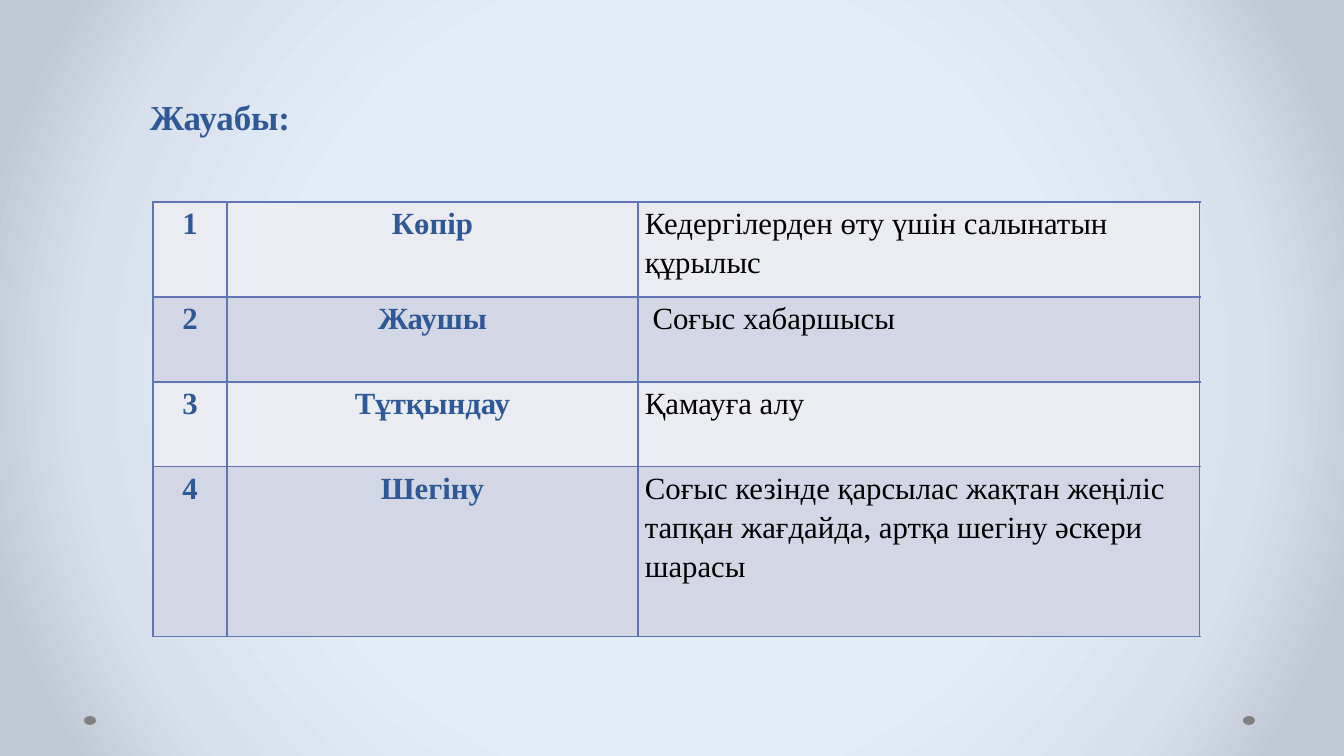
"""Build the answer slide: a heading and a table of four terms with meanings."""
from lxml.etree import SubElement
from pptx import Presentation
from pptx.dml.color import RGBColor
from pptx.enum.shapes import MSO_SHAPE
from pptx.enum.text import PP_ALIGN
from pptx.oxml.ns import qn
from pptx.util import Pt

HEADING = "Жауабы:"
ANSWERS = [
    ("1", "Көпір", "Кедергілерден өту үшін салынатын құрылыс"),
    ("2", "Жаушы", " Соғыс хабаршысы"),
    ("3", "Тұтқындау", "Қамауға алу"),
    ("4", "Шегіну", "Соғыс кезінде қарсылас жақтан жеңіліс тапқан жағдайда, "
                    "артқа шегіну әскери шарасы"),
]
COLUMN_WIDTHS = [74, 411, 562]
ROW_HEIGHTS = [95, 85, 85, 170]
TABLE_LEFT, TABLE_TOP = 153, 202
DOT_LEFTS = [84, 1243]

BLUE = RGBColor(0x2F, 0x58, 0x97)
BLACK = RGBColor(0, 0, 0)
GRAY = RGBColor(0x80, 0x80, 0x80)
BORDER = RGBColor(0x60, 0x76, 0xB4)
BANDS = [RGBColor(0xEA, 0xEC, 0xF2), RGBColor(0xD2, 0xD6, 0xE5)]
BACKGROUND = [
    (50, RGBColor(0xE3, 0xED, 0xF9)),
    (76, RGBColor(0xD8, 0xE0, 0xEB)),
    (92, RGBColor(0xBF, 0xC9, 0xD4)),
]


def px(length):
    return round(length * 914400 / 100.8)


def paint_background(page):
    page.background.fill.gradient()
    gradient = page.element.find(".//" + qn("a:gradFill"))
    for child in list(gradient):
        gradient.remove(child)
    stops = SubElement(gradient, qn("a:gsLst"))
    for percent, color in BACKGROUND:
        stop = SubElement(stops, qn("a:gs"), pos=str(percent * 1000))
        SubElement(stop, qn("a:srgbClr"), val=str(color))
    circle = SubElement(gradient, qn("a:path"), {"path": "circle"})
    SubElement(circle, qn("a:fillToRect"), {side: "50000" for side in "ltrb"})


def write(frame, text, size, color, bold, align=PP_ALIGN.LEFT):
    para = frame.paragraphs[0]
    para.alignment = align
    span = para.add_run()
    span.text = text
    span.font.color.rgb = color
    style = {"name": "Times New Roman", "size": Pt(size), "bold": bold}
    for name, value in style.items():
        setattr(span.font, name, value)
    return para


def add_borders(cell):
    properties = cell._tc.get_or_add_tcPr()
    for index, side in enumerate(("lnL", "lnR", "lnT", "lnB")):
        line = SubElement(properties, qn("a:" + side), w=str(Pt(1)))
        fill = SubElement(line, qn("a:solidFill"))
        SubElement(fill, qn("a:srgbClr"), val=str(BORDER))
        properties.insert(index, line)


def add_answers(page):
    table = page.shapes.add_table(
        len(ANSWERS), len(COLUMN_WIDTHS), px(TABLE_LEFT), px(TABLE_TOP),
        px(sum(COLUMN_WIDTHS)), px(sum(ROW_HEIGHTS))).table
    table.first_row = table.horz_banding = False
    for column, width in zip(table.columns, COLUMN_WIDTHS):
        column.width = px(width)
    margins = {"margin_left": px(7), "margin_right": px(7),
               "margin_top": 0, "margin_bottom": 0}
    for row, (answer, height) in enumerate(zip(ANSWERS, ROW_HEIGHTS)):
        table.rows[row].height = px(height)
        for column, text in enumerate(answer):
            cell = table.cell(row, column)
            for name, value in margins.items():
                setattr(cell, name, value)
            cell.fill.solid()
            cell.fill.fore_color.rgb = BANDS[row % 2]
            add_borders(cell)
            is_term = column < 2
            para = write(cell.text_frame, text, 22,
                         BLUE if is_term else BLACK, is_term,
                         PP_ALIGN.CENTER if is_term else PP_ALIGN.LEFT)
            para.line_spacing = 1.15


def main():
    deck = Presentation()
    deck.slide_width, deck.slide_height = px(1344), px(756)
    page = deck.slides.add_slide(deck.slide_layouts[6])
    paint_background(page)
    for left in DOT_LEFTS:
        dot = page.shapes.add_shape(
            MSO_SHAPE.OVAL, px(left), px(716), px(12), px(9))
        dot.shadow.inherit = False
        dot.fill.solid()
        dot.fill.fore_color.rgb = GRAY
        dot.line.fill.background()
    box = page.shapes.add_textbox(px(140), px(91), px(522), px(52))
    box.text_frame.word_wrap = True
    write(box.text_frame, HEADING, 25, BLUE, True)
    add_answers(page)
    deck.save("out.pptx")


if __name__ == "__main__":
    main()
